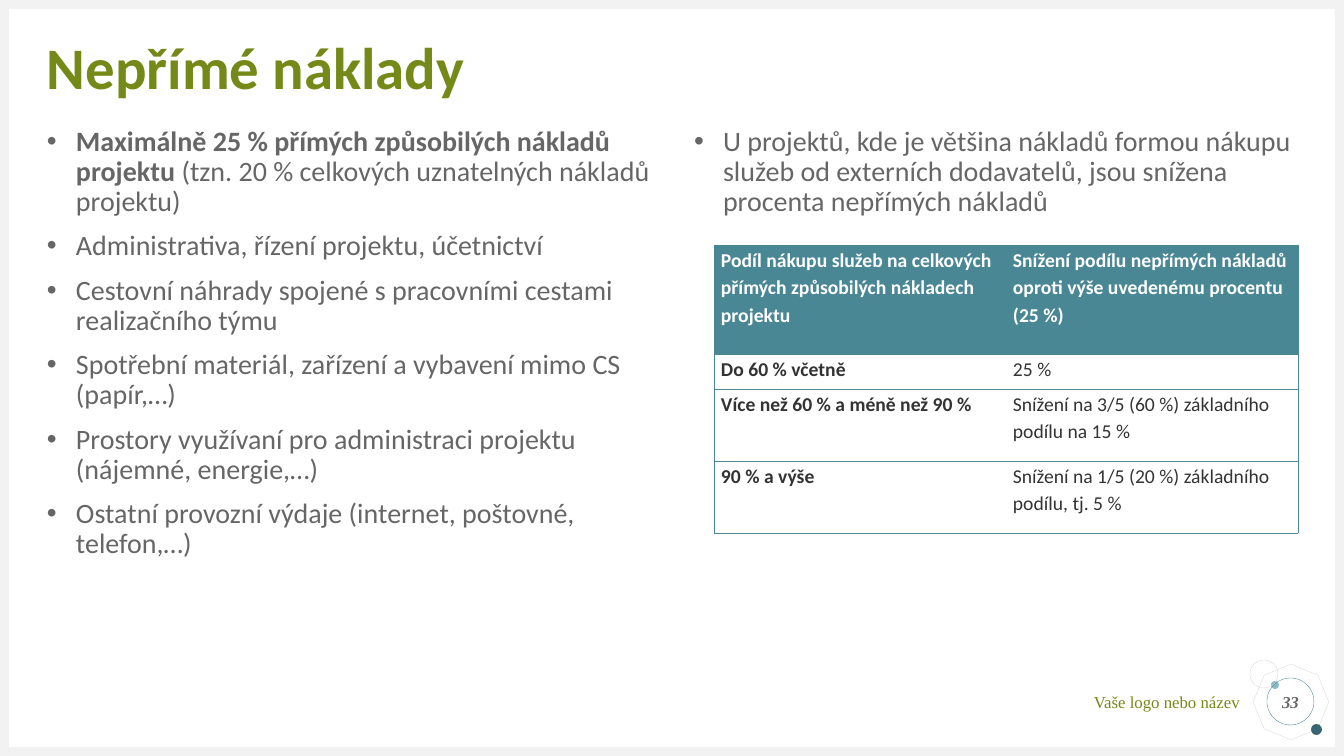
from dataclasses import dataclass
from pptx import Presentation
from pptx.dml.color import RGBColor as RGB
from pptx.enum.shapes import MSO_SHAPE as SHAPE
from pptx.enum.text import MSO_ANCHOR as ANCHOR, PP_ALIGN as ALIGN
from pptx.oxml import parse_xml
from pptx.oxml.ns import nsdecls
from pptx.util import Emu, Pt


@dataclass(frozen=True)
class Theme:
    """Colours, fonts and type sizes of the slide."""
    green: str = "758918"
    teal: str = "4A8795"
    dark_teal: str = "376570"
    light_teal: str = "8CBBC6"
    grey: str = "666666"
    dark: str = "333333"
    white: str = "FFFFFF"
    frame: str = "F2F2F2"
    hairline: str = "D9D9D9"
    sans: str = "Calibri"
    serif: str = "Times New Roman"
    title: int = 42
    body: int = 20
    cell: int = 14
    small: int = 12


T = Theme()
W, H, EDGE = 1344, 756, 9
LEFT_POINTS = [
    [("Maximálně 25 % přímých způsobilých nákladů projektu ", True),
     ("(tzn. 20 % celkových uznatelných nákladů projektu)", False)],
    [("Administrativa, řízení projektu, účetnictví", False)],
    [("Cestovní náhrady spojené s pracovními cestami realizačního týmu", False)],
    [("Spotřební materiál, zařízení a vybavení mimo CS (papír,…)", False)],
    [("Prostory využívaní pro administraci projektu (nájemné, energie,…)", False)],
    [("Ostatní provozní výdaje (internet, poštovné, telefon,…)", False)],
]
RIGHT_POINTS = [
    [("U projektů, kde je většina nákladů formou nákupu služeb od externích "
      "dodavatelů, jsou snížena procenta nepřímých nákladů", False)],
]
RATES = [
    ("Podíl nákupu služeb na celkových přímých způsobilých nákladech projektu",
     "Snížení podílu nepřímých nákladů oproti výše uvedenému procentu (25 %)"),
    ("Do 60 % včetně", "25 %"),
    ("Více než 60 % a méně než 90 %", "Snížení na 3/5 (60 %) základního podílu na 15 %"),
    ("90 % a výše", "Snížení na 1/5 (20 %) základního podílu, tj. 5 %"),
]
ROW_HEIGHTS = [109, 35, 72, 72]


def px(n):
    """Turn pixels into EMU."""
    return Emu(round(n * 914400 / 100.8))


def box(*lengths):
    """Turn several pixel lengths into EMU."""
    return [px(n) for n in lengths]


def set_all(obj, values):
    """Set attributes from a dict."""
    for name, value in values.items():
        setattr(obj, name, value)


def add_run(p, text, size, color, font=T.sans, **style):
    """Append a formatted run to a paragraph."""
    r = p.add_run()
    r.text = text
    set_all(r.font, {"size": Pt(size), "name": font, **style})
    r.font.color.rgb = RGB.from_string(color)


def clear_frame(tf, anchor=ANCHOR.TOP):
    """Remove insets and wrap a text frame."""
    set_all(tf, {"margin_left": 0, "margin_right": 0, "margin_top": 0,
                 "margin_bottom": 0, "word_wrap": True, "vertical_anchor": anchor})


def add_figure(s, kind, bounds, fill=None, line=None, rotation=0):
    """Add a preset shape with a plain fill or a hairline."""
    sp = s.shapes.add_shape(kind, *box(*bounds))
    sp.shadow.inherit = False
    sp.rotation = rotation
    if fill:
        sp.fill.solid()
        sp.fill.fore_color.rgb = RGB.from_string(fill)
    else:
        sp.fill.background()
    if line:
        sp.line.color.rgb = RGB.from_string(line)
        sp.line.width = Pt(0.25)
    else:
        sp.line.fill.background()
    return sp


def add_frame(s):
    """Draw the four bars along the slide edges."""
    for bounds in ((0, H - EDGE, W, EDGE), (0, 0, W, EDGE),
                   (0, 0, EDGE, H), (W - EDGE, 0, EDGE, H)):
        add_figure(s, SHAPE.RECTANGLE, bounds, fill=T.frame)


def add_title(s, text):
    """Place and format the title placeholder."""
    sp = s.shapes.title
    set_all(sp, dict(zip(("left", "top", "width", "height"), box(47, 47, 1250, 47))))
    clear_frame(sp.text_frame, ANCHOR.MIDDLE)
    p = sp.text_frame.paragraphs[0]
    set_all(p, {"alignment": ALIGN.LEFT, "line_spacing": 0.9})
    add_run(p, text, T.title, T.green, bold=True)


def add_bullets(s, left, points):
    """Add a column of bulleted paragraphs."""
    tf = s.shapes.add_textbox(*box(left, 127, 603, 555)).text_frame
    clear_frame(tf)
    for i, point in enumerate(points):
        p = tf.add_paragraph() if i else tf.paragraphs[0]
        pPr = p._p.get_or_add_pPr()
        pPr.set("marL", str(px(29)))
        pPr.set("indent", str(-px(29)))
        for tag in ('buFont {} typeface="Arial"', 'buChar {} char="•"'):
            pPr.append(parse_xml(f"<a:{tag.format(nsdecls('a'))}/>"))
        set_all(p, {"line_spacing": 0.9, "space_before": Pt(10 if i else 0)})
        for text, bold in point:
            add_run(p, text, T.body, T.grey, bold=bold)


def set_borders(cell, sides):
    """Draw the named sides of a cell and hide the others."""
    tcPr = cell._tc.get_or_add_tcPr()
    solid = f'<a:solidFill><a:srgbClr val="{T.teal}"/></a:solidFill>'
    for i, side in enumerate("LRTB"):
        paint = solid if side in sides else "<a:noFill/>"
        tcPr.insert(i, parse_xml(
            f'<a:ln{side} {nsdecls("a")} w="{Pt(0.5)}">{paint}</a:ln{side}>'))


def add_rates(s):
    """Add the table of reduced rates."""
    table = s.shapes.add_table(len(RATES), 2, *box(714, 245, 584, sum(ROW_HEIGHTS))).table
    table.horz_banding = False
    for row, height in zip(table.rows, ROW_HEIGHTS):
        row.height = px(height)
    for y, texts in enumerate(RATES):
        for x, text in enumerate(texts):
            cell = table.cell(y, x)
            set_all(cell, {"margin_left": px(7), "margin_right": px(7),
                           "margin_top": 0, "margin_bottom": 0})
            if y == 0:
                cell.fill.solid()
                cell.fill.fore_color.rgb = RGB.from_string(T.teal)
            else:
                cell.fill.background()
            set_borders(cell, "RTB" if x else "LTB")
            p = cell.text_frame.paragraphs[0]
            p.line_spacing = 1.15
            add_run(p, text, T.cell, T.dark if y else T.white, bold=y == 0 or x == 0)


def add_footer(s):
    """Add the footer text and the ornament with the slide number."""
    add_figure(s, SHAPE.OCTAGON, (1256, 667, 70, 70), line=T.hairline, rotation=22.7)
    add_figure(s, SHAPE.OVAL, (1271, 681, 8, 8), fill=T.light_teal)
    add_figure(s, SHAPE.OVAL, (1311, 724, 11, 11), fill=T.dark_teal)
    add_figure(s, SHAPE.OVAL, (1250, 660, 28, 28), line=T.hairline)
    number = add_figure(s, SHAPE.OVAL, (1267, 678, 47, 47), line=T.teal)
    clear_frame(number.text_frame, ANCHOR.MIDDLE)
    p = number.text_frame.paragraphs[0]
    p.alignment = ALIGN.CENTER
    add_run(p, "33", T.small, T.grey, T.serif, bold=True, italic=True)
    tf = s.shapes.add_textbox(*box(963, 692, 277, 20)).text_frame
    clear_frame(tf)
    p = tf.paragraphs[0]
    p.alignment = ALIGN.RIGHT
    add_run(p, "Vaše logo nebo název", T.small, T.green, T.serif)


def main():
    """Build and save the slide."""
    prs = Presentation()
    prs.slide_width, prs.slide_height = box(W, H)
    s = prs.slides.add_slide(prs.slide_layouts[5])
    add_frame(s)
    add_footer(s)
    add_title(s, "Nepřímé náklady")
    add_bullets(s, 47, LEFT_POINTS)
    add_bullets(s, 694, RIGHT_POINTS)
    add_rates(s)
    prs.save("out.pptx")


if __name__ == "__main__":
    main()
